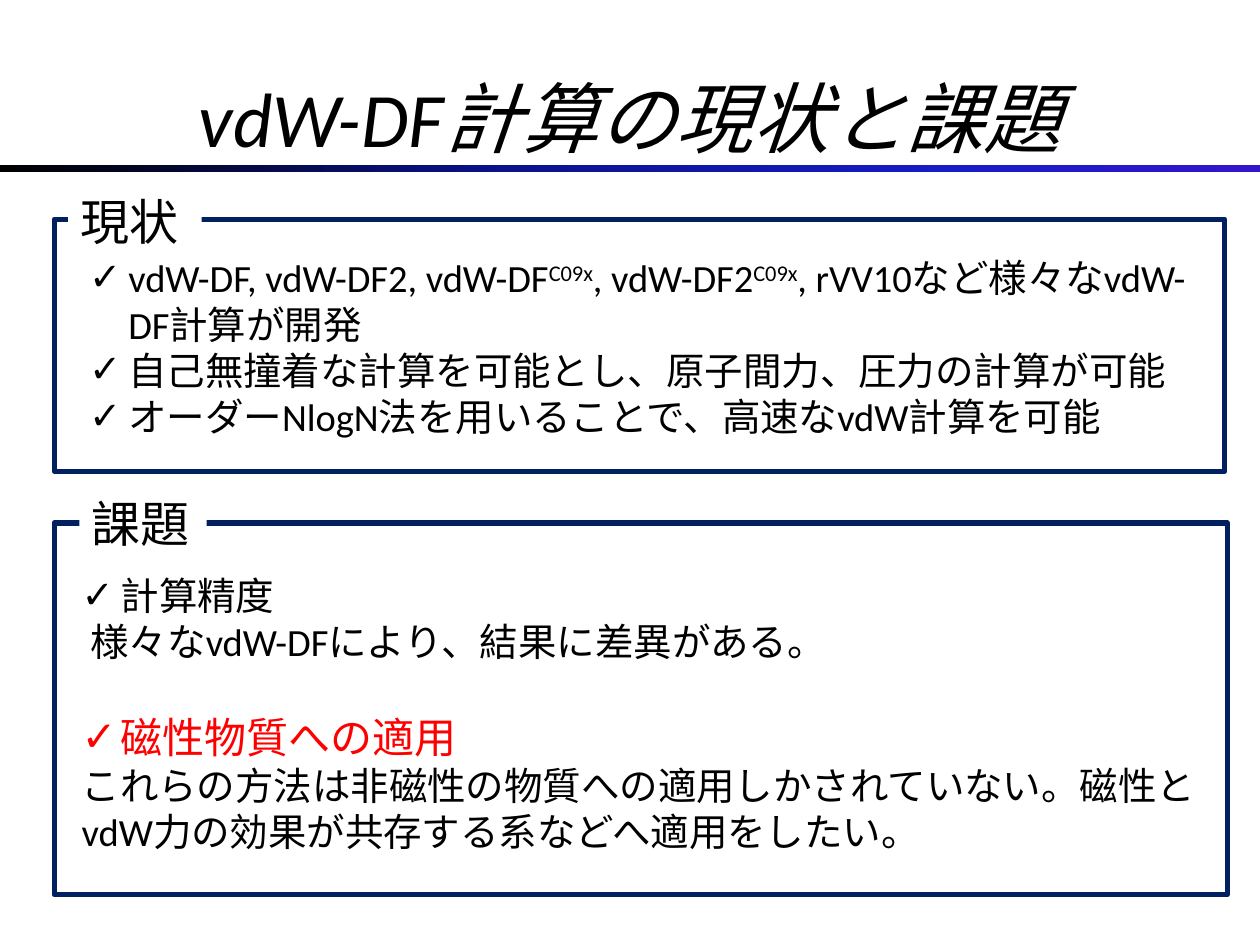
from copy import deepcopy

from lxml import etree
from pptx import Presentation
from pptx.dml.color import RGBColor
from pptx.enum.shapes import MSO_SHAPE
from pptx.enum.text import MSO_ANCHOR, PP_ALIGN
from pptx.oxml.ns import qn
from pptx.util import Inches, Pt

RECT = MSO_SHAPE.RECTANGLE
TOP, MIDDLE = MSO_ANCHOR.TOP, MSO_ANCHOR.MIDDLE
LEFT, CENTER = PP_ALIGN.LEFT, PP_ALIGN.CENTER

BLACK = RGBColor(0x00, 0x00, 0x00)
WHITE = RGBColor(0xFF, 0xFF, 0xFF)
RED = RGBColor(0xFF, 0x00, 0x00)
NAVY = RGBColor(0x00, 0x20, 0x60)
BAR_STOPS = [
    (0, BLACK),
    (0.4, RGBColor(0x0A, 0x12, 0x8C)),
    (0.76, RGBColor(0x18, 0x1C, 0xC7)),
    (1, RGBColor(0x33, 0x15, 0xCB)),
]

FONT = "Calibri"
COLUMNS, ROWS = 100, 75
HANG = Inches(0.31)


def add_run(p, text, size=22, color=BLACK, italic=False, raised=False):
    """Append a formatted run to a paragraph."""
    r = p.add_run()
    r.text = text
    r.font.name = FONT
    r.font.size = Pt(size)
    r.font.color.rgb = color
    r.font.italic = italic
    if raised:
        r._r.get_or_add_rPr().set("baseline", "30000")


class SlideBuilder:
    """Draws elements on one slide, measured in grid columns and rows."""

    def __init__(self, prs):
        self.slide = prs.slides.add_slide(prs.slide_layouts[6])
        self.column = prs.slide_width / COLUMNS
        self.row = prs.slide_height / ROWS

    def place(self, x, y, w, h):
        return (int(x * self.column), int(y * self.row),
                int(w * self.column), int(h * self.row))

    def rect(self, *area):
        sp = self.slide.shapes.add_shape(RECT, *self.place(*area))
        sp.shadow.inherit = False
        sp.line.fill.background()
        return sp

    def frame(self, *area):
        sp = self.rect(*area)
        sp.fill.background()
        sp.line.color.rgb = NAVY
        sp.line.width = Pt(3)

    def heading(self, text, *area):
        sp = self.rect(*area)
        sp.fill.solid()
        sp.fill.fore_color.rgb = WHITE
        tf = sp.text_frame
        tf.vertical_anchor = TOP
        tf.word_wrap = False
        p = tf.paragraphs[0]
        p.alignment = LEFT
        add_run(p, text, size=28)

    def gradient_bar(self, stops, *area):
        sp = self.rect(*area)
        sp.fill.gradient()
        sp.fill.gradient_angle = 0
        gs_list = sp._element.spPr.find(".//" + qn("a:gsLst"))
        for _ in stops[2:]:
            gs_list.append(deepcopy(gs_list[0]))
        for stop, (position, color) in zip(sp.fill.gradient_stops, stops):
            stop.position = position
            stop.color.rgb = color

    def text_frame(self, *area, anchor=TOP):
        sp = self.slide.shapes.add_textbox(*self.place(*area))
        tf = sp.text_frame
        tf.word_wrap = True
        tf.vertical_anchor = anchor
        return tf

    def title(self, text, *area):
        p = self.text_frame(*area, anchor=MIDDLE).paragraphs[0]
        p.alignment = CENTER
        add_run(p, text, size=44, italic=True)

    def body(self, items, *area):
        tf = self.text_frame(*area)
        for i, (runs, options) in enumerate(items):
            p = tf.add_paragraph() if i else tf.paragraphs[0]
            p.space_before = Pt(options.get("before", 0))
            pPr = p._p.get_or_add_pPr()
            if options.get("check"):
                pPr.set("marL", str(HANG))
                pPr.set("indent", str(-HANG))
                etree.SubElement(pPr, qn("a:buFont")).set("typeface", FONT)
                etree.SubElement(pPr, qn("a:buChar")).set("char", "✓")
            else:
                pPr.set("indent", str(Inches(options.get("indent", 0))))
            for text, style in runs:
                add_run(p, text, **style)


def main():
    prs = Presentation()
    prs.slide_width, prs.slide_height = Inches(10), Inches(7.5)
    s = SlideBuilder(prs)
    check, raised = {"check": True}, {"raised": True}

    s.title("vdW-DF計算の現状と課題", 5, 3, 90, 12.5)
    s.body([
        ([("vdW-DF, vdW-DF2, vdW-DF", {}), ("C09x", raised),
          (", vdW-DF2", {}), ("C09x", raised),
          (", rVV10など様々なvdW-DF計算が開発", {})], check),
        ([("自己無撞着な計算を可能とし、原子間力、圧力の計算が可能", {})], check),
        ([("オーダーNlogN法を用いることで、高速なvdW計算を可能", {})], check),
    ], 6.1, 19.7, 89.8, 15.8)
    s.body([
        ([("計算精度", {})], check),
        ([("様々なvdW-DFにより、結果に差異がある。", {})], {"indent": 0.07}),
        ([("磁性物質への適用", {"size": 24, "color": RED})],
         {"check": True, "before": 27}),
        ([("これらの方法は非磁性の物質への適用しかされていない。"
           "磁性とvdW力の効果が共存する系などへ適用をしたい。", {})], {}),
    ], 5.5, 44.9, 93.3, 23.6)

    s.frame(4.3, 41.5, 93.1, 29.5)
    s.heading("課題", 6.3, 38.7, 10.1, 5.7)
    s.frame(4.3, 17.4, 92.9, 20)
    s.heading("現状", 5.4, 14.7, 10.6, 5.7)
    s.gradient_bar(BAR_STOPS, 0, 13.1, COLUMNS, 0.6)

    prs.save("out.pptx")


if __name__ == "__main__":
    main()
